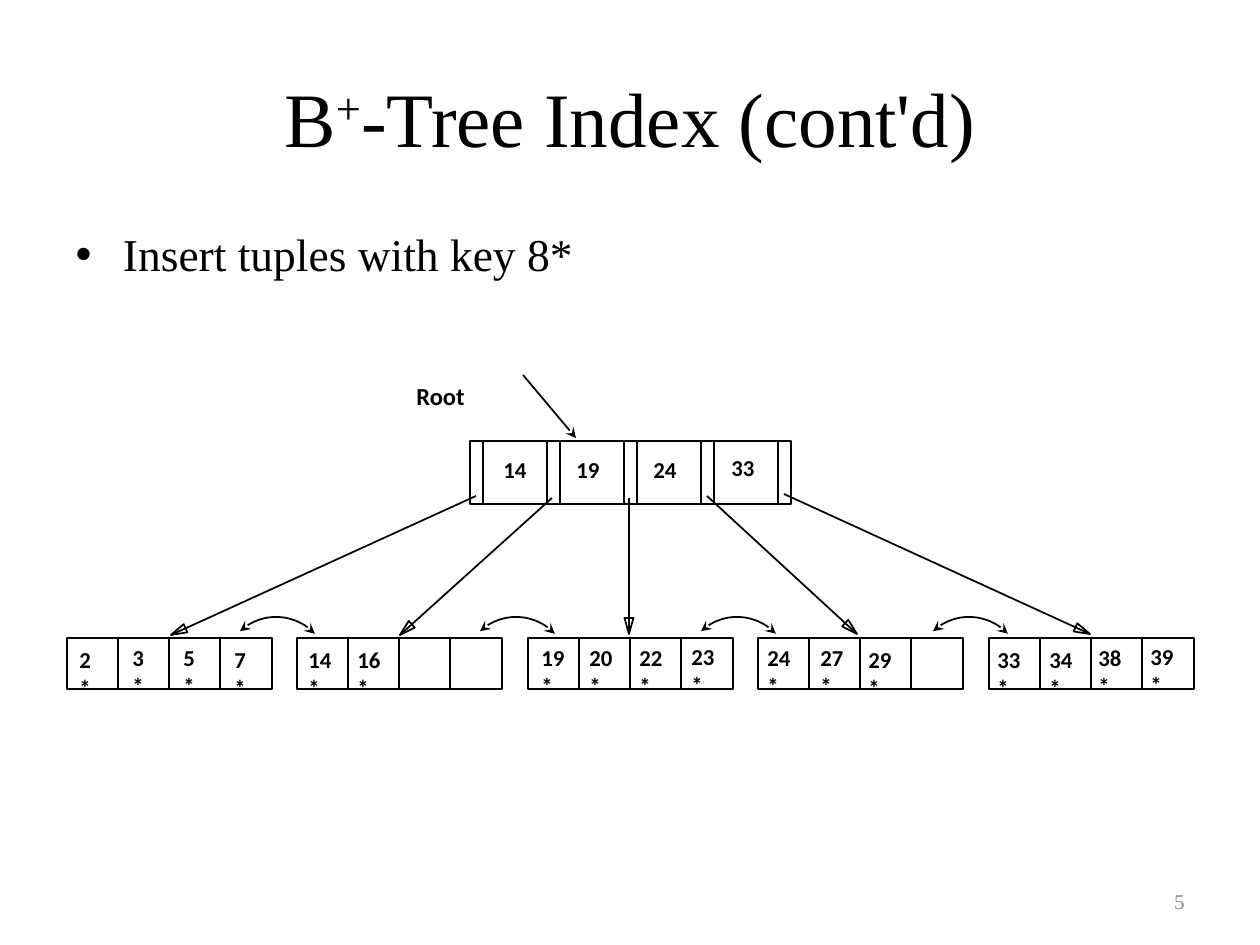
from dataclasses import dataclass
from math import atan2, cos, pi, sin
from typing import NamedTuple

from lxml.etree import SubElement
from pptx import Presentation
from pptx.dml.color import RGBColor
from pptx.enum.shapes import MSO_CONNECTOR as Connector, MSO_SHAPE as Preset
from pptx.enum.text import MSO_ANCHOR as Anchor, PP_ALIGN as Align
from pptx.oxml.ns import qn
from pptx.util import Pt

EMU_PER_PX = 914400 / 126


@dataclass(frozen=True)
class Theme:
    ink: RGBColor = RGBColor(0x00, 0x00, 0x00)
    muted: RGBColor = RGBColor(0x8C, 0x8C, 0x8C)
    serif: str = "Times New Roman"
    sans: str = "Calibri"
    title: int = 44
    body: int = 26
    root: int = 14
    key: int = 13
    number: int = 12
    line: int = 1


class Label(NamedTuple):
    text: str
    left: int
    top: int


class Pointer(NamedTuple):
    start: tuple[int, int]
    end: tuple[int, int]


THEME = Theme()

ROOT_LEFT, ROOT_TOP, ROOT_HEIGHT = 470, 441, 63
KEY_PITCH, SLOT_WIDTH, KEY_COUNT = 77, 13, 4
LEAF_LEFT, LEAF_TOP, LEAF_HEIGHT = 67, 638, 51
LEAF_STEP, LEAF_WIDTH, LEAF_COUNT, CELL_COUNT = 461, 205, 5, 4  # step spans two leaves
SIBLING_TOP, SIBLING_RADIUS, SIBLING_TURN = 606, 53, 317
SIBLING_LEFTS = (251, 491, 712, 944)

KEYS = (
    Label("14", 491, 450), Label("19", 564, 450),
    Label("24", 641, 450), Label("33", 719, 448),
)
ENTRIES = (
    Label("2*", 67, 640), Label("3*", 120, 638), Label("5*", 171, 638), Label("7*", 222, 640),
    Label("14*", 296, 640), Label("16*", 345, 640),
    Label("19*", 529, 638), Label("20*", 577, 638), Label("22*", 627, 638), Label("23*", 679, 637),
    Label("24*", 755, 638), Label("27*", 808, 638), Label("29*", 856, 640),
    Label("33*", 985, 640), Label("34*", 1037, 640), Label("38*", 1086, 638), Label("39*", 1138, 637),
)
POINTERS = (
    Pointer((476, 496), (171, 635)),
    Pointer((552, 498), (400, 635)),
    Pointer((629, 498), (629, 634)),
    Pointer((707, 496), (857, 634)),
    Pointer((784, 494), (1090, 634)),
)


def px(*lengths: float) -> list[int]:
    return [round(length * EMU_PER_PX) for length in lengths]


def move(shape, left: int, top: int, width: int, height: int) -> None:
    shape.left, shape.top, shape.width, shape.height = px(left, top, width, height)


def style_text(frame, size: int, font: str, color: RGBColor = THEME.ink, bold: bool = False) -> None:
    for para in frame.paragraphs:
        for span in para.runs:
            span.font.size = Pt(size)
            span.font.name = font
            span.font.color.rgb = color
            span.font.bold = bold


def style_line(shape, *arrow_ends: str) -> None:
    """Draw a plain thin outline, with stealth arrows at the named ends."""
    shape.line.color.rgb = THEME.ink
    shape.line.width = Pt(THEME.line)
    properties = shape._element.spPr
    for end in arrow_ends:
        SubElement(properties.find(qn("a:ln")), qn(f"a:{end}"), type="stealth")
    SubElement(properties, qn("a:effectLst"))


def add_text(page, label: Label, width: int, height: int, size: int, wrap: bool = True):
    box = page.shapes.add_textbox(*px(label.left, label.top, width, height))
    box.text_frame.word_wrap = wrap
    box.text_frame.text = label.text
    style_text(box.text_frame, size, THEME.sans, bold=True)
    return box


def add_cell(page, left: int, top: int, width: int, height: int) -> None:
    cell = page.shapes.add_shape(Preset.RECTANGLE, *px(left, top, width, height))
    cell.fill.background()
    style_line(cell)


def add_line(page, start: tuple[int, int], end: tuple[int, int], *arrow_ends: str) -> None:
    line = page.shapes.add_connector(Connector.STRAIGHT, *px(*start, *end))
    style_line(line, *arrow_ends)


def add_outline(page, points: list[tuple[float, float]], close: bool):
    first, *rest = [tuple(px(*point)) for point in points]
    builder = page.shapes.build_freeform(*first)
    builder.add_line_segments(rest, close=close)
    shape = builder.convert_to_shape()
    shape.fill.background()
    return shape


def add_pointer(page, pointer: Pointer) -> None:
    """Draw a line that ends in a hollow triangle."""
    add_line(page, *pointer)
    (x1, y1), (x2, y2) = pointer
    angle = atan2(y2 - y1, x2 - x1)
    length, half = 16, 4.5
    base_x, base_y = x2 - length * cos(angle), y2 - length * sin(angle)
    side_x, side_y = half * sin(angle), half * cos(angle)
    corners = [(base_x - side_x, base_y + side_y), (x2, y2), (base_x + side_x, base_y - side_y)]
    style_line(add_outline(page, corners, close=True))


def add_sibling_link(page, left: int) -> None:
    """Draw a quarter circle, turned so that it arches over the gap."""
    steps = 24
    angles = [step * pi / 2 / steps for step in range(steps + 1)]
    points = [
        (left + SIBLING_RADIUS * sin(angle), SIBLING_TOP + SIBLING_RADIUS * (1 - cos(angle)))
        for angle in angles
    ]
    arc = add_outline(page, points, close=False)
    arc.rotation = SIBLING_TURN
    style_line(arc, "headEnd", "tailEnd")


def add_headings(page) -> None:
    title, body = page.placeholders
    move(title, 63, 38, 1134, 158)
    para = title.text_frame.paragraphs[0]
    para.alignment = Align.CENTER
    for text in ("B", "+", "-Tree Index (cont'd)"):
        para.add_run().text = text
    style_text(title.text_frame, THEME.title, THEME.serif)
    para.runs[1]._r.get_or_add_rPr().set("baseline", "30000")

    move(body, 63, 220, 1134, 624)
    body.text_frame.text = "Insert tuples with key 8*"
    body.text_frame.paragraphs[0].alignment = Align.JUSTIFY
    style_text(body.text_frame, THEME.body, THEME.serif)


def add_nodes(page) -> None:
    for index in range(KEY_COUNT):
        left = ROOT_LEFT + index * KEY_PITCH
        add_cell(page, left, ROOT_TOP, KEY_PITCH, ROOT_HEIGHT)
        slot = left + SLOT_WIDTH
        add_line(page, (slot, ROOT_TOP), (slot, ROOT_TOP + ROOT_HEIGHT))
    add_cell(page, ROOT_LEFT + KEY_COUNT * KEY_PITCH, ROOT_TOP, SLOT_WIDTH, ROOT_HEIGHT)
    for leaf in range(LEAF_COUNT):
        left = LEAF_LEFT + leaf * LEAF_STEP // 2
        edges = [left + cell * LEAF_WIDTH // CELL_COUNT for cell in range(CELL_COUNT + 1)]
        for start, end in zip(edges, edges[1:]):
            add_cell(page, start, LEAF_TOP, end - start, LEAF_HEIGHT)


def add_page_number(page) -> None:
    box = add_text(page, Label("5", 903, 876), 294, 50, THEME.number)
    box.text_frame.vertical_anchor = Anchor.MIDDLE
    box.text_frame.paragraphs[0].alignment = Align.RIGHT
    style_text(box.text_frame, THEME.number, THEME.serif, THEME.muted)


def main() -> None:
    deck = Presentation()
    deck.slide_width, deck.slide_height = px(1260, 945)
    page = deck.slides.add_slide(deck.slide_layouts[1])
    add_headings(page)
    add_page_number(page)
    add_nodes(page)
    for pointer in POINTERS:
        add_pointer(page, pointer)
    add_text(page, Label("Root", 404, 375), 81, 42, THEME.root, wrap=False)
    for label in KEYS:
        add_text(page, label, 50, 40, THEME.key, wrap=False)
    for label in ENTRIES:
        add_text(page, label, 46 if len(label.text) == 2 else 58, 40, THEME.key)
    add_line(page, (523, 375), (576, 438), "tailEnd")
    for left in SIBLING_LEFTS:
        add_sibling_link(page, left)
    deck.save("out.pptx")


if __name__ == "__main__":
    main()
